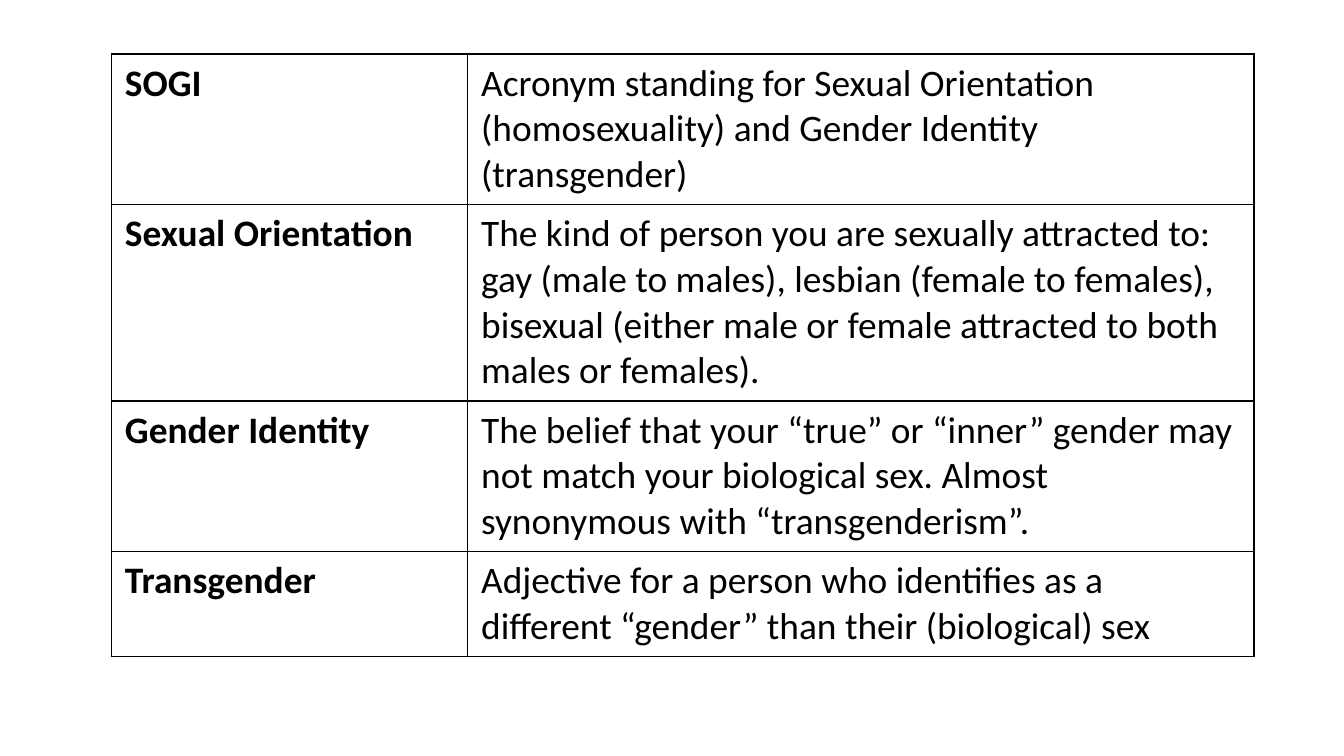
"""Build a slide with a two-column glossary table."""
from lxml import etree
from pptx import Presentation
from pptx.dml.color import RGBColor
from pptx.oxml.ns import qn
from pptx.util import Inches, Pt

BLACK = RGBColor(0, 0, 0)
FONT = "Calibri"
SLIDE_WIDTH = 10
SLIDE_HEIGHT = SLIDE_WIDTH * 9 / 16
LEFT, TOP = 0.83, 0.4
COL_WIDTHS = (2.65, 5.85)
LINE_HEIGHT, ROW_PADDING = 0.34, 0.1

GLOSSARY = [
    ("SOGI",
     "Acronym standing for Sexual Orientation (homosexuality) and Gender "
     "Identity (transgender)", 3),
    ("Sexual Orientation",
     "The kind of person you are sexually attracted to: gay (male to males), "
     "lesbian (female to females), bisexual (either male or female attracted "
     "to both males or females).", 4),
    ("Gender Identity",
     "The belief that your “true” or “inner” gender may not match your "
     "biological sex. Almost synonymous with “transgenderism”.", 3),
    ("Transgender",
     "Adjective for a person who identifies as a different “gender” than "
     "their (biological) sex", 2),
]


def write_text(tf, text, size=20, bold=False, color=BLACK):
    r = tf.paragraphs[0].add_run()
    r.text = text
    r.font.name = FONT
    r.font.size = Pt(size)
    r.font.bold = bold
    r.font.color.rgb = color


def add_borders(cell, width=1, color=BLACK):
    tc_pr = cell._tc.get_or_add_tcPr()
    for side in ("lnL", "lnR", "lnT", "lnB"):
        ln = etree.SubElement(tc_pr, qn(f"a:{side}"), w=str(Pt(width)))
        fill = etree.SubElement(ln, qn("a:solidFill"))
        etree.SubElement(fill, qn("a:srgbClr"), val=str(color))


def main():
    prs = Presentation()
    prs.slide_width = Inches(SLIDE_WIDTH)
    prs.slide_height = Inches(SLIDE_HEIGHT)
    s = prs.slides.add_slide(prs.slide_layouts[6])

    heights = [lines * LINE_HEIGHT + ROW_PADDING for _, _, lines in GLOSSARY]
    table = s.shapes.add_table(
        len(GLOSSARY), len(COL_WIDTHS), Inches(LEFT), Inches(TOP),
        Inches(sum(COL_WIDTHS)), Inches(sum(heights))).table
    table.first_row = False
    table.horz_banding = False
    for column, width in zip(table.columns, COL_WIDTHS):
        column.width = Inches(width)

    for i, (term, meaning, _) in enumerate(GLOSSARY):
        table.rows[i].height = Inches(heights[i])
        for j, text in enumerate((term, meaning)):
            cell = table.cell(i, j)
            add_borders(cell)
            cell.fill.background()
            write_text(cell.text_frame, text, bold=j == 0)

    prs.save("out.pptx")


if __name__ == "__main__":
    main()
